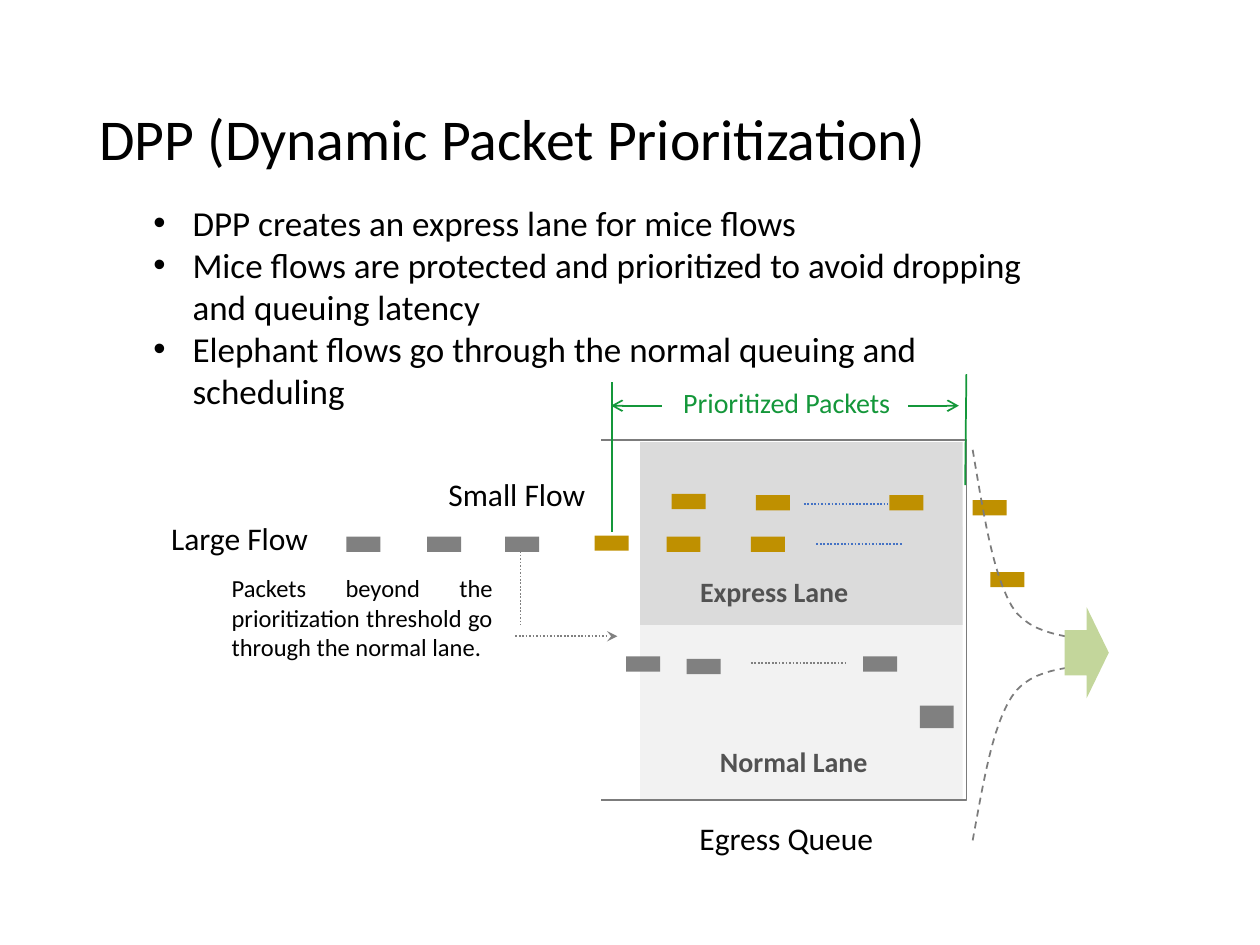
import pptx
import pptx.util
import pptx.dml.color
import pptx.enum.dml
import pptx.enum.shapes
import pptx.enum.text
import pptx.oxml.ns
import lxml.etree
from dataclasses import dataclass

Inches = pptx.util.Inches
Align = pptx.enum.text.PP_ALIGN
Anchor = pptx.enum.text.MSO_ANCHOR
Shape = pptx.enum.shapes.MSO_SHAPE
Dash = pptx.enum.dml.MSO_LINE


@dataclass(frozen=True)
class Theme:
    font: str = "Calibri"
    title: int = 33
    bullet: int = 20
    label: int = 18
    lane: int = 16
    note: int = 14
    black: str = "000000"
    white: str = "FFFFFF"
    lane_text: str = "525252"
    green: str = "14973A"
    blue: str = "4472C4"
    outline: str = "7C7C7C"
    large: str = "808080"
    small: str = "BF9000"
    express: str = "DBDBDB"
    normal: str = "F2F2F2"
    exit: str = "C3D69B"


THEME = Theme()

# Content: boxes are left, top, width, height in inches
TITLE = "DPP (Dynamic Packet Prioritization)"
BULLETS = [
    "DPP creates an express lane for mice flows",
    "Mice flows are protected and prioritized to avoid dropping and queuing latency",
    "Elephant flows go through the normal queuing and scheduling",
]
NOTE = "Packets beyond the prioritization threshold go through the normal lane."

# Text, box, size, colour, bold, alignment, left inset
LABELS = [
    ("Prioritized Packets", (5.13, 3.01, 2.23, 0.37), THEME.lane, THEME.green, False, Align.CENTER, 0.1),
    ("Express Lane", (5.16, 4.51, 1.97, 0.37), THEME.lane, THEME.lane_text, True, Align.CENTER, 0.1),
    ("Normal Lane", (5.09, 5.86, 2.42, 0.37), THEME.lane, THEME.lane_text, True, Align.CENTER, 0.1),
    ("Egress Queue", (4.01, 6.45, 3.72, 0.4), THEME.label, THEME.black, False, Align.CENTER, 0.84),
    ("Large Flow", (1.26, 4.07, 1.49, 0.4), THEME.label, THEME.black, False, Align.LEFT, 0.1),
    ("Small Flow", (3.46, 3.72, 1.49, 0.4), THEME.label, THEME.black, False, Align.LEFT, 0.1),
    (NOTE, (1.74, 4.5, 2.27, 0.81), THEME.note, THEME.black, False, Align.JUSTIFY, 0.1),
]

NORMAL_LANE = (5.08, 4.18, 2.56, 2.17)
QUEUE = (4.65, 3.49, 3.02, 2.86)
EXPRESS_LANE = (5.08, 3.51, 2.56, 1.45)
QUEUE_OPENING = (4.53, 3.37, 0.24, 3.48)
EXIT_ARROW = (8.45, 4.82, 0.35, 0.72)

PACKET = (0.27, 0.12)
SMALL_PACKETS = [(5.33, 3.92), (6, 3.93), (7.06, 3.93), (7.72, 3.97),
                 (4.72, 4.25), (5.29, 4.26), (5.96, 4.26), (7.86, 4.54)]
LARGE_PACKETS = [(2.75, 4.26), (3.39, 4.26), (4.01, 4.26),
                 (4.97, 5.21), (5.45, 5.23), (6.85, 5.21)]
TALL_PACKET = (7.3, 5.6, 0.27, 0.18)

# Start, end, colour, dash, arrowhead
DOT = Dash.ROUND_DOT
LINES = [
    ((6.38, 4), (7.05, 4), THEME.blue, DOT, None),
    ((6.48, 4.32), (7.16, 4.32), THEME.blue, DOT, None),
    ((5.96, 5.26), (6.72, 5.26), THEME.large, DOT, None),
    ((4.13, 4.32), (4.13, 4.96), THEME.large, DOT, None),
    ((4.09, 5.05), (4.9, 5.05), THEME.large, DOT, "stealth"),
    ((7.66, 3.85), (7.67, 2.97), THEME.green, None, None),
    ((4.86, 4.22), (4.86, 3.03), THEME.green, None, None),
    ((7.21, 3.22), (7.61, 3.22), THEME.green, None, "arrow"),
    ((5.25, 3.22), (4.85, 3.22), THEME.green, None, "arrow"),
]

# Funnel edges: cubic curves, each segment starting where the last one ended
FUNNEL = [
    [(7.72, 3.57), (7.81, 4.1), (7.88, 4.55), (8.03, 4.81), (8.18, 5.06), (8.53, 5.04), (8.62, 5.09)],
    [(7.72, 6.67), (7.81, 6.18), (7.88, 5.76), (8.03, 5.53), (8.18, 5.29), (8.53, 5.31), (8.62, 5.27)],
]


def rgb(colour):
    return pptx.dml.color.RGBColor.from_string(colour)


def add_child(parent, tag, **attributes):
    return lxml.etree.SubElement(parent, pptx.oxml.ns.qn(tag), **attributes)


def style_line(line, colour, dash=None):
    line.color.rgb = rgb(colour)
    line.width = pptx.util.Pt(1)
    if dash:
        line.dash_style = dash


def add_block(page, box, fill=None, outline=None, kind=Shape.RECTANGLE):
    block = page.shapes.add_shape(kind, *map(Inches, box))
    block.shadow.inherit = False
    if fill:
        block.fill.solid()
        block.fill.fore_color.rgb = rgb(fill)
    else:
        block.fill.background()
    if outline:
        style_line(block.line, outline)
    else:
        block.line.fill.background()


def add_line(page, start, end, colour, dash, head):
    line = page.shapes.add_connector(
        pptx.enum.shapes.MSO_CONNECTOR.STRAIGHT, *map(Inches, start + end))
    style_line(line.line, colour, dash)
    if head:
        add_child(line.line._get_or_add_ln(), "a:tailEnd", type=head)
    add_child(line._element.spPr, "a:effectLst")


def add_curve(page, controls, steps=12):
    points = [controls[0]]
    for first in range(0, len(controls) - 1, 3):
        segment = controls[first:first + 4]
        for step in range(1, steps + 1):
            t = step / steps
            weights = ((1 - t) ** 3, 3 * t * (1 - t) ** 2, 3 * t * t * (1 - t), t ** 3)
            points.append(tuple(sum(w * p[axis] for w, p in zip(weights, segment))
                                for axis in (0, 1)))
    points = [(Inches(x), Inches(y)) for x, y in points]
    builder = page.shapes.build_freeform(*points[0])
    builder.add_line_segments(points[1:], close=False)
    curve = builder.convert_to_shape()
    curve.shadow.inherit = False
    curve.fill.background()
    style_line(curve.line, THEME.outline, Dash.DASH)


def add_text(page, texts, box, size, colour=THEME.black, bold=False,
             align=Align.LEFT, inset=0.1, anchor=Anchor.TOP):
    frame = page.shapes.add_textbox(*map(Inches, box)).text_frame
    frame.word_wrap = True
    frame.margin_left = Inches(inset)
    frame.vertical_anchor = anchor
    frame.text = "\n".join(texts)
    for para in frame.paragraphs:
        para.alignment = align
        para.font.name = THEME.font
        para.font.size = pptx.util.Pt(size)
        para.font.bold = bold
        para.font.color.rgb = rgb(colour)
    return frame.paragraphs


deck = pptx.Presentation()
deck.slide_width, deck.slide_height = Inches(10), Inches(7.5)
page = deck.slides.add_slide(deck.slide_layouts[6])

# Title
for para in add_text(page, [TITLE], (0.69, 0.4, 8.62, 1.45), THEME.title, anchor=Anchor.MIDDLE):
    para.line_spacing = 0.9

# Queue and its lanes; the opening hides the queue's left edge
add_block(page, NORMAL_LANE, THEME.normal)
add_block(page, QUEUE, outline=THEME.outline)
add_block(page, EXPRESS_LANE, THEME.express)
add_block(page, QUEUE_OPENING, THEME.white)

# Packets
for packets, colour in ((SMALL_PACKETS, THEME.small), (LARGE_PACKETS, THEME.large)):
    for place in packets:
        add_block(page, place + PACKET, colour)
add_block(page, TALL_PACKET, THEME.large)

# Funnel to the exit
for controls in FUNNEL:
    add_curve(page, controls)
add_block(page, EXIT_ARROW, THEME.exit, kind=Shape.RIGHT_ARROW)

# Lines and labels
for line in LINES:
    add_line(page, *line)
for text, *look in LABELS:
    add_text(page, [text], *look)

# Bullets
for para in add_text(page, BULLETS, (1.12, 1.55, 7.33, 1.78), THEME.bullet):
    properties = para._p.get_or_add_pPr()
    properties.set("marL", str(Inches(0.31)))
    properties.set("indent", str(-Inches(0.31)))
    bullet_font = lxml.etree.Element(pptx.oxml.ns.qn("a:buFont"), typeface="Arial")
    bullet = lxml.etree.Element(pptx.oxml.ns.qn("a:buChar"), char="•")
    properties.insert(0, bullet_font)
    properties.insert(1, bullet)

deck.save("out.pptx")
